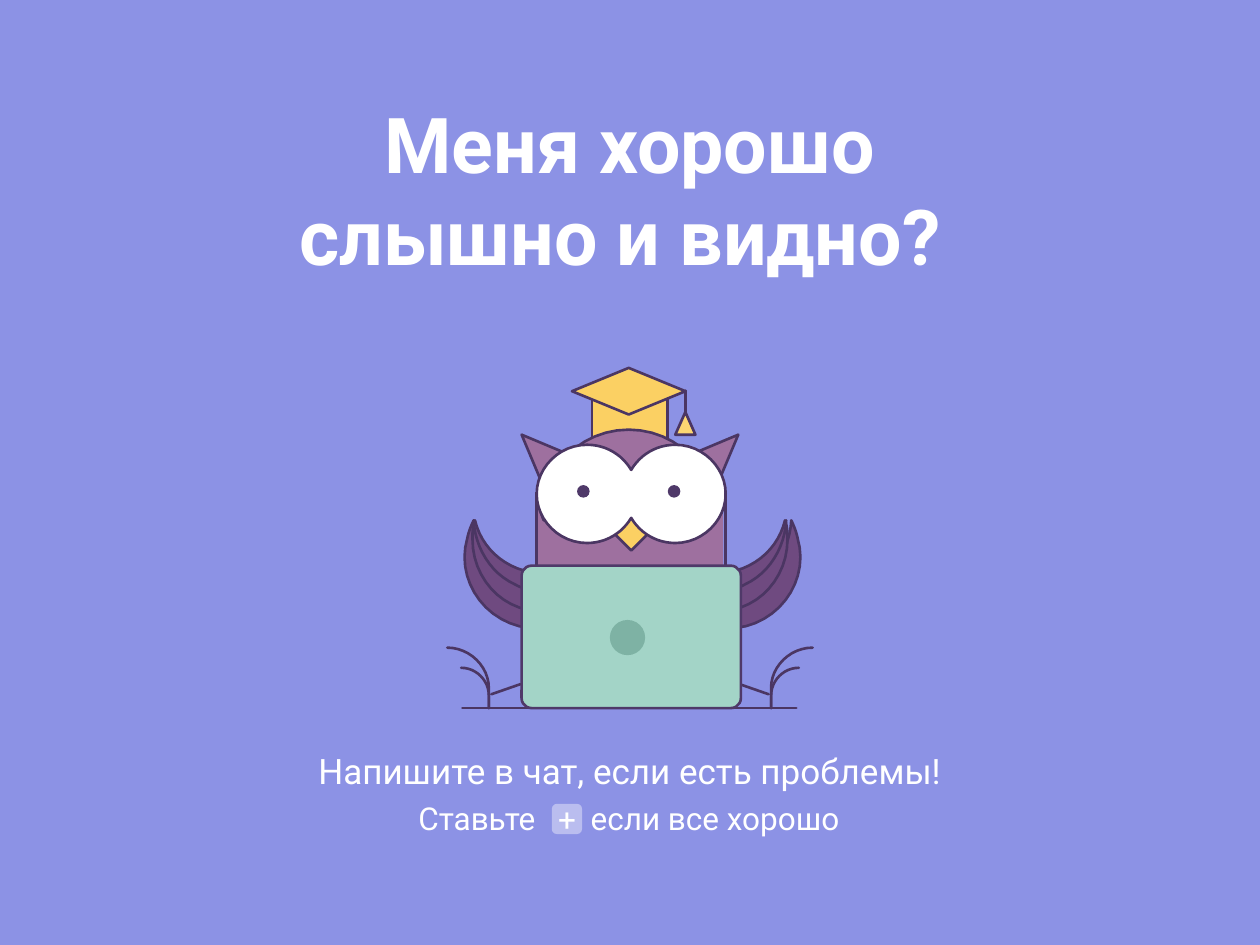
from lxml.etree import SubElement
from pptx import Presentation
from pptx.dml.color import RGBColor
from pptx.enum.shapes import MSO_CONNECTOR, MSO_SHAPE as Shape
from pptx.enum.text import MSO_ANCHOR as Anchor, PP_ALIGN as Align
from pptx.oxml.ns import qn
from pptx.util import Pt

THEME = {
    "font": "Roboto", "title": 44, "prompt": 20, "hint": 18, "line": 1.5,
    "background": "8C92E5", "white": "FFFFFF", "outline": "4B3663",
    "wing": "6F4A80", "plumage": "9E709F", "gold": "FBD063", "tassel": "FCD672",
    "pupil": "4F3969", "laptop": "A3D4C7", "badge": "7EB2A4",
}
TITLE = "Меня хорошо слышно и видно? "
PROMPT = "Напишите в чат, если есть проблемы!"
HINT = "Ставьте\tесли все хорошо"
KEY = "+"

# The owl is drawn on a grid of 0.72 pt. In a contour, the first pair is the
# start, every other pair ends a line and every six numbers are a Bezier curve.
GRID = 0.72
CURVE_STEPS = 12
MIDDLE = 500
BACK_AXIS = 502  # the back wings mirror about a slightly shifted axis

BACK_WING = [(575, 483), (575, 479, 575, 474, 576, 469), (582, 468, 587, 467, 593, 465),
             (614, 456, 627, 435, 628, 413), (630, 417, 632, 422, 633, 427),
             (642, 457, 623, 489, 592, 497), (586, 498, 580, 499, 574, 498),
             (575, 494, 575, 489, 575, 483)]
FRONT_WING = [(574, 483), (574, 474, 574, 464, 575, 455), (576, 454, 578, 454, 579, 454),
              (601, 450, 618, 434, 623, 413), (625, 418, 625, 423, 625, 428),
              (625, 458, 603, 483, 574, 485)]
FEATHER = [(574, 469), (580, 468, 586, 467, 591, 464), (611, 455, 623, 434, 624, 413)]
EAR = [(550, 381), (565, 395), (586, 345), (536, 366)]
HEAD = [(568, 409), (568, 428, 499, 394, 499, 394), (499, 394, 430, 428, 430, 409),
        (430, 372, 461, 341, 499, 341), (537, 341, 568, 372, 568, 409)]
EYES = [(536, 353), (521, 353, 508, 361, 501, 373), (494, 361, 481, 353, 466, 353),
        (444, 353, 426, 371, 426, 392), (426, 413, 444, 431, 466, 431),
        (481, 431, 494, 423, 501, 411), (508, 423, 521, 431, 536, 431),
        (558, 431, 576, 413, 576, 392), (576, 371, 558, 353, 536, 353)]
STEMS = [[(645, 514), (627, 514, 612, 529, 612, 546), (612, 562)],
         [(634, 530), (622, 530, 612, 540, 612, 552), (612, 562)]]
TASSEL = [(552, 345), (536, 345), (544, 327)]


def color(name):
    return RGBColor.from_string(THEME[name])


def grid(value):
    return Pt(value * GRID)


def finish(shape, fill=None, line=None):
    shape.shadow.inherit = False
    if fill:
        shape.fill.solid()
        shape.fill.fore_color.rgb = color(fill)
    else:
        shape.fill.background()
    if line:
        outline(shape, line)
    else:
        shape.line.fill.background()
    return shape


def outline(shape, name="outline"):
    shape.line.color.rgb = color(name)
    shape.line.width = Pt(THEME["line"])
    shape.element.spPr.find(qn("a:ln")).set("cap", "rnd")


def flatten(contour):
    """Turn lines and Bezier curves into a list of points."""
    points = [contour[0]]
    for step in contour[1:]:
        if len(step) == 2:
            points.append(step)
            continue
        controls = (points[-1], step[:2], step[2:4], step[4:])
        for index in range(1, CURVE_STEPS + 1):
            t = index / CURVE_STEPS
            weights = ((1 - t) ** 3, 3 * t * (1 - t) ** 2, 3 * t * t * (1 - t), t ** 3)
            points.append(tuple(sum(w * c[axis] for w, c in zip(weights, controls))
                                for axis in (0, 1)))
    return points


def draw(slide, contour, fill=None, line="outline", mirror=None):
    """Draw a contour, closed when filled; mirror is the x of a mirror axis."""
    points = [(grid(x if mirror is None else 2 * mirror - x), grid(y))
              for x, y in flatten(contour)]
    builder = slide.shapes.build_freeform(*points[0], scale=1.0)
    builder.add_line_segments(points[1:], close=bool(fill))
    finish(builder.convert_to_shape(), fill, line)


def preset(slide, kind, left, top, right, bottom, fill, line="outline"):
    shape = slide.shapes.add_shape(kind, grid(left), grid(top),
                                   grid(right - left), grid(bottom - top))
    return finish(shape, fill, line)


def stroke(slide, *ends):
    line = slide.shapes.add_connector(MSO_CONNECTOR.STRAIGHT, *map(grid, ends))
    outline(line)
    SubElement(line.element.spPr, qn("a:effectLst"))


def write(shape, text, size, bold=False, align=Align.CENTER, tab=None, **frame_values):
    frame = shape.text_frame
    for name, value in {"word_wrap": True, "vertical_anchor": Anchor.MIDDLE,
                        **frame_values}.items():
        setattr(frame, name, value)
    para = frame.paragraphs[0]
    para.alignment = align
    if tab:
        tabs = SubElement(para._p.get_or_add_pPr(), qn("a:tabLst"))
        SubElement(tabs, qn("a:tab"), pos=str(tab), algn="l")
    span = para.add_run()
    span.text = text
    for name, value in {"name": THEME["font"], "size": Pt(THEME[size]), "bold": bold}.items():
        setattr(span.font, name, value)
    span.font.color.rgb = color("white")


def text_box(slide, left, top, width, height, *content, **values):
    box = slide.shapes.add_textbox(Pt(left), Pt(top), Pt(width), Pt(height))
    write(box, *content, **values)


def draw_owl(slide):
    for back_mirror, front_mirror in ((None, None), (BACK_AXIS, MIDDLE)):
        draw(slide, BACK_WING, "wing", mirror=back_mirror)
        draw(slide, FRONT_WING, "wing", mirror=front_mirror)
        draw(slide, FEATHER, mirror=front_mirror)
    preset(slide, Shape.RECTANGLE, 470, 315, 530, 357, "gold")
    preset(slide, Shape.RECTANGLE, 426, 397, 574, 491, "plumage", None)
    for mirror in (MIDDLE, None):
        draw(slide, EAR, "plumage", mirror=mirror)
    draw(slide, HEAD, "plumage")
    preset(slide, Shape.DIAMOND, 488, 411, 514, 437, "gold")
    draw(slide, EYES, "white")
    for x in (463, 535):
        preset(slide, Shape.OVAL, x - 5, 385, x + 5, 395, "pupil", None)
    for x in (426, 576):
        stroke(slide, x, 391, x, 451)

    stroke(slide, 367, 562, 632, 562)
    for mirror in (MIDDLE, None):
        for stem in STEMS:
            draw(slide, stem, mirror=mirror)
    for side in (-1, 1):
        stroke(slide, MIDDLE + side * 110, 551, MIDDLE + side * 87, 543)

    draw(slide, TASSEL, "tassel")
    laptop = preset(slide, Shape.ROUNDED_RECTANGLE, 414, 449, 588, 562, "laptop", "pupil")
    laptop.adjustments[0] = 0.07
    preset(slide, Shape.DIAMOND, 454, 292, 544, 329, "gold")
    stroke(slide, 544, 310, 544, 329)
    preset(slide, Shape.OVAL, 484, 492, 512, 520, "badge", None)


def main():
    deck = Presentation()
    deck.slide_width, deck.slide_height = Pt(720), Pt(540)
    slide = deck.slides.add_slide(deck.slide_layouts[6])
    slide.background.fill.solid()
    slide.background.fill.fore_color.rgb = color("background")

    text_box(slide, 126, 51, 468, 114, TITLE, "title", bold=True)
    draw_owl(slide)
    text_box(slide, 42.5, 424, 635, 32, PROMPT, "prompt")
    text_box(slide, 230.5, 453, 258.5, 29, HINT, "hint", align=Align.LEFT, tab=Pt(98.5),
             margin_left=Pt(8.5), vertical_anchor=Anchor.TOP)

    key = preset(slide, Shape.ROUNDED_RECTANGLE, 438, 638, 462, 662, "white", None)
    SubElement(key.element.spPr.find(".//" + qn("a:srgbClr")), qn("a:alpha"), val="40000")
    margins = {f"margin_{side}": 0 for side in ("left", "top", "right", "bottom")}
    write(key, KEY, "hint", **margins)
    deck.save("out.pptx")


if __name__ == "__main__":
    main()
